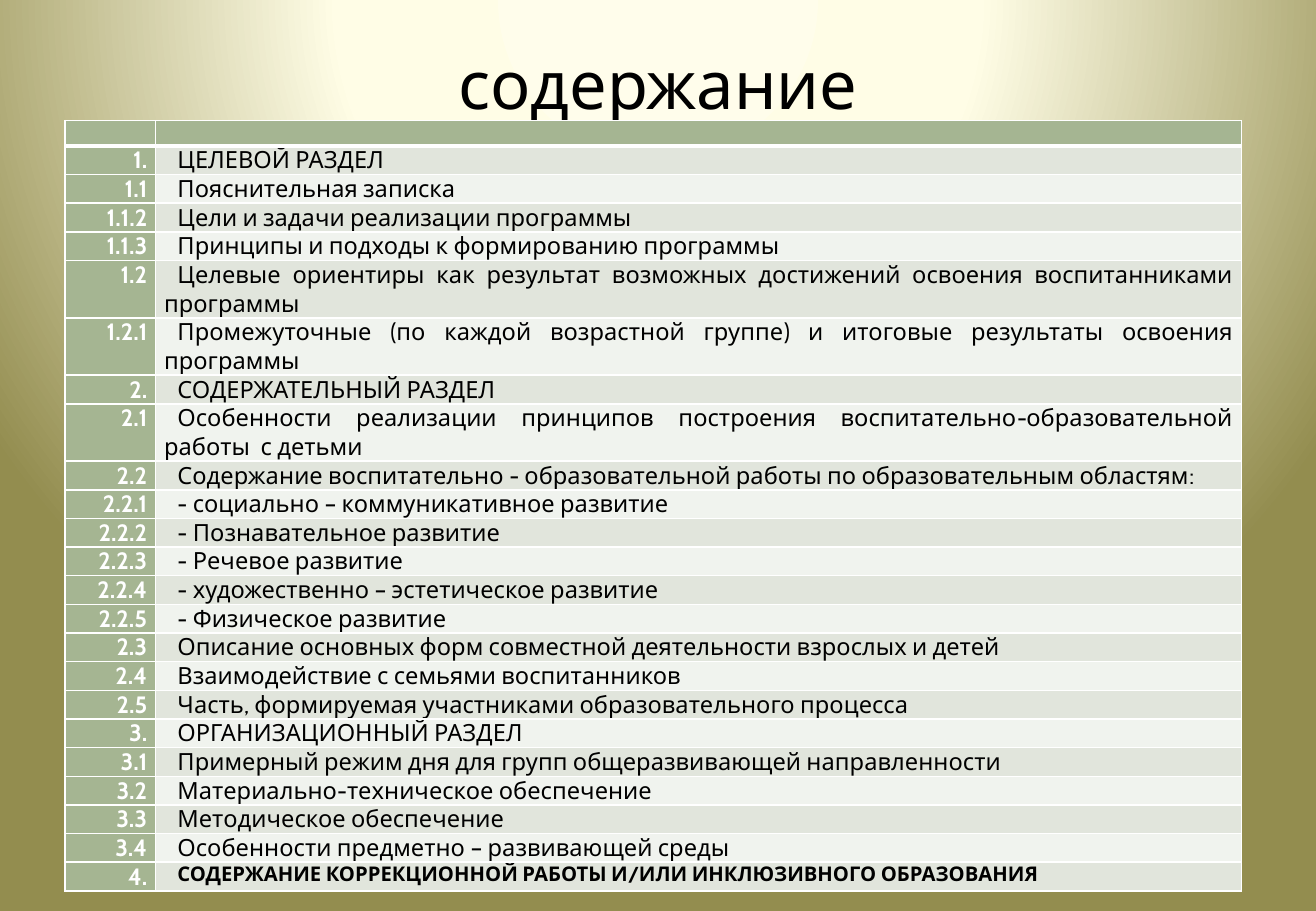
from dataclasses import dataclass

from pptx import Presentation
from pptx.dml.color import RGBColor
from pptx.enum.text import MSO_ANCHOR as Anchor, PP_ALIGN as Align
from pptx.oxml import parse_xml
from pptx.oxml.ns import nsdecls
from pptx.slide import Slide
from pptx.table import _Cell as Cell
from pptx.text.text import TextFrame
from pptx.util import Pt

FONT = "Cabin"
BLACK, WHITE, GREEN = "000000", "FFFFFF", "A5B592"
BANDS = ("E1E5DC", "F0F3EE")
BACKDROP = ((0, "FFFDEB"), (40, "FFFDE6"), (100, "938D4F"))
LINE_H, HEADER_H = 17, 15
THIN, THICK = 1, 3


@dataclass
class Entry:
    """One line of the contents."""
    number: str
    title: str
    lines: int = 1
    size: float = 14
    bold: bool = False


ENTRIES = [
    Entry("1.", "ЦЕЛЕВОЙ РАЗДЕЛ"),
    Entry("1.1", "Пояснительная записка"),
    Entry("1.1.2", "Цели и задачи реализации программы"),
    Entry("1.1.3", "Принципы и подходы к формированию программы"),
    Entry("1.2", "Целевые ориентиры как результат возможных достижений "
                 "освоения воспитанниками программы", lines=2),
    Entry("1.2.1", "Промежуточные (по каждой возрастной группе) и итоговые "
                   "результаты освоения программы", lines=2),
    Entry("2.", "СОДЕРЖАТЕЛЬНЫЙ РАЗДЕЛ"),
    Entry("2.1", "Особенности реализации принципов построения "
                 "воспитательно-образовательной работы  с детьми", lines=2),
    Entry("2.2", "Содержание воспитательно - образовательной работы "
                 "по образовательным областям:"),
    Entry("2.2.1", "- социально – коммуникативное развитие"),
    Entry("2.2.2", "- Познавательное развитие"),
    Entry("2.2.3", "- Речевое развитие"),
    Entry("2.2.4", "- художественно – эстетическое развитие"),
    Entry("2.2.5", "- Физическое развитие"),
    Entry("2.3", "Описание основных форм совместной деятельности взрослых и детей"),
    Entry("2.4", "Взаимодействие с семьями воспитанников"),
    Entry("2.5", "Часть, формируемая участниками образовательного процесса"),
    Entry("3.", "ОРГАНИЗАЦИОННЫЙ РАЗДЕЛ"),
    Entry("3.1", "Примерный режим дня для групп общеразвивающей направленности"),
    Entry("3.2", "Материально-техническое обеспечение"),
    Entry("3.3", "Методическое обеспечение"),
    Entry("3.4", "Особенности предметно – развивающей среды"),
    Entry("4.", "СОДЕРЖАНИЕ КОРРЕКЦИОННОЙ РАБОТЫ И/ИЛИ ИНКЛЮЗИВНОГО ОБРАЗОВАНИЯ",
          size=12, bold=True),
]


def rgb(color: str) -> RGBColor:
    """Turn a hex string into a colour."""
    return RGBColor.from_string(color)


def write(tf: TextFrame, text: str, *, size: float = 14, color: str = BLACK,
          bold: bool = False, align: Align = Align.LEFT, indent: float = 0) -> None:
    """Write one formatted paragraph into a text frame."""
    p = tf.paragraphs[0]
    p.alignment = align
    if indent:
        p._p.get_or_add_pPr().set("indent", str(Pt(indent)))
    r = p.add_run()
    r.text = text
    r.font.name, r.font.size, r.font.bold = FONT, Pt(size), bold
    r.font.color.rgb = rgb(color)


def paint_background(s: Slide) -> None:
    """Fill the slide background with a circular gradient."""
    stops = "".join(f'<a:gs pos="{pos * 1000}"><a:srgbClr val="{color}"/></a:gs>'
                    for pos, color in BACKDROP)
    bg = parse_xml(
        f'<p:bg {nsdecls("p", "a")}><p:bgPr><a:gradFill rotWithShape="1">'
        f'<a:gsLst>{stops}</a:gsLst><a:path path="circle">'
        '<a:fillToRect l="50000" t="-80000" r="50000" b="180000"/></a:path>'
        '</a:gradFill><a:effectLst/></p:bgPr></p:bg>')
    s.element.cSld.insert(0, bg)


def style_cell(cell: Cell, fill: str, *, top: float = THIN, bottom: float = THIN) -> None:
    """Set the fill, margins and white borders of a cell."""
    cell.fill.solid()
    cell.fill.fore_color.rgb = rgb(fill)
    cell.margin_left = cell.margin_right = Pt(5)
    cell.margin_top = cell.margin_bottom = 0
    tcPr = cell._tc.get_or_add_tcPr()
    sides = (("lnL", THIN), ("lnR", THIN), ("lnT", top), ("lnB", bottom))
    for i, (side, width) in enumerate(sides):
        tcPr.insert(i, parse_xml(
            f'<a:{side} {nsdecls("a")} w="{Pt(width)}"><a:solidFill>'
            f'<a:srgbClr val="{WHITE}"/></a:solidFill></a:{side}>'))


def add_title(s: Slide, text: str) -> None:
    """Add the slide title."""
    tf = s.shapes.add_textbox(Pt(39), Pt(21.6), Pt(702), Pt(55.4)).text_frame
    tf.word_wrap = True
    tf.vertical_anchor = Anchor.MIDDLE
    write(tf, text, size=39.6, align=Align.CENTER)


def add_contents(s: Slide, entries: list[Entry]) -> None:
    """Add the contents table with its empty header row."""
    heights = [HEADER_H] + [LINE_H * e.lines for e in entries]
    table = s.shapes.add_table(len(heights), 2, Pt(38.5), Pt(71.5),
                               Pt(697.5), Pt(sum(heights))).table
    table.first_row = table.horz_banding = False
    for col, width in zip(table.columns, (53.8, 643.7)):
        col.width = Pt(width)
    for row, height in zip(table.rows, heights):
        row.height = Pt(height)
    for cell in table.rows[0].cells:
        style_cell(cell, GREEN, bottom=THICK)
        cell.text_frame.paragraphs[0]._p.append(
            parse_xml(f'<a:endParaRPr {nsdecls("a")} sz="800"/>'))
    for i, e in enumerate(entries):
        number, title = table.rows[i + 1].cells
        top = THIN if i else THICK
        style_cell(number, GREEN, top=top)
        style_cell(title, BANDS[i % 2], top=top)
        write(number.text_frame, e.number, color=WHITE, bold=True, align=Align.RIGHT)
        write(title.text_frame, e.title, size=e.size, bold=e.bold,
              align=Align.JUSTIFY, indent=7.9)


def main() -> None:
    """Build and save the contents slide."""
    prs = Presentation()
    prs.slide_width, prs.slide_height = Pt(780), Pt(540)
    s = prs.slides.add_slide(prs.slide_layouts[6])
    paint_background(s)
    add_title(s, "содержание")
    add_contents(s, ENTRIES)
    prs.save("out.pptx")


if __name__ == "__main__":
    main()
